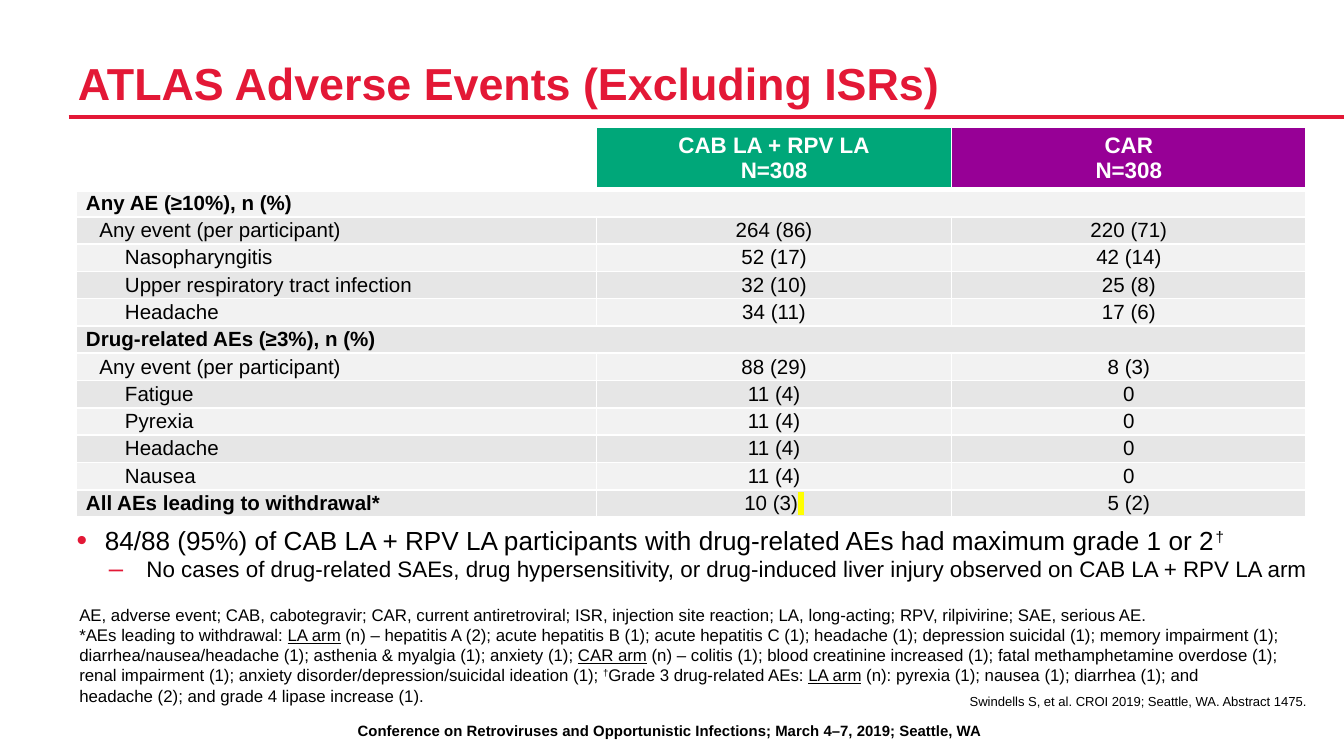
from dataclasses import dataclass
from typing import Optional

from lxml.etree import SubElement
from pptx import Presentation
from pptx.dml.color import RGBColor
from pptx.enum.shapes import MSO_CONNECTOR
from pptx.enum.text import MSO_ANCHOR as Anchor, PP_ALIGN as Align
from pptx.oxml.ns import qn
from pptx.util import Emu, Inches, Pt

RED, GREEN, PURPLE = "E31836", "00A779", "970096"
BLACK, WHITE, YELLOW = "000000", "FFFFFF", "FFFF00"
BANDS = ("F2F2F2", "E6E6E6")
SLIDE_WIDTH = Inches(10)
SLIDE_HEIGHT = SLIDE_WIDTH * 9 // 16


@dataclass(frozen=True)
class Frame:
    """A place on the slide, in percent of its width and height."""
    left: float
    top: float
    width: float
    height: float

    def emu(self) -> tuple:
        return (across(self.left), down(self.top), across(self.width), down(self.height))


@dataclass(frozen=True)
class Span:
    text: str
    underline: bool = False
    raised: bool = False


@dataclass(frozen=True)
class Style:
    size: float
    color: str = BLACK
    bold: bool = False
    align: Align = Align.LEFT


@dataclass(frozen=True)
class Bullet:
    mark: str
    margin: float
    hanging: float


@dataclass(frozen=True)
class Row:
    label: str
    injection: str = ""
    current: str = ""
    indent: float = 0
    bold: bool = False


LABEL_INDENT, EVENT_INDENT = 0.1, 0.29
TREATMENTS = [("CAB LA + RPV LA\nN=308", GREEN), ("CAR\nN=308", PURPLE)]
ROWS = [
    Row("Any AE (≥10%), n (%)", bold=True),
    Row("Any event (per participant)", "264 (86)", "220 (71)", LABEL_INDENT),
    Row("Nasopharyngitis", "52 (17)", "42 (14)", EVENT_INDENT),
    Row("Upper respiratory tract infection", "32 (10)", "25 (8)", EVENT_INDENT),
    Row("Headache", "34 (11)", "17 (6)", EVENT_INDENT),
    Row("Drug-related AEs (≥3%), n (%)", bold=True),
    Row("Any event (per participant)", "88 (29)", "8 (3)", LABEL_INDENT),
    *(Row(event, "11 (4)", "0", EVENT_INDENT)
      for event in ("Fatigue", "Pyrexia", "Headache", "Nausea")),
    Row("All AEs leading to withdrawal*", "10 (3)", "5 (2)", bold=True),
]
DAGGER = Span("†", raised=True)
LA_ARM, CAR_ARM = Span("LA arm", underline=True), Span("CAR arm", underline=True)
ABBREVIATIONS = [Span(
    "AE, adverse event; CAB, cabotegravir; CAR, current antiretroviral; ISR, injection site "
    "reaction; LA, long-acting; RPV, rilpivirine; SAE, serious AE.")]
WITHDRAWALS = [
    Span("*AEs leading to withdrawal: "), LA_ARM,
    Span(" (n) – hepatitis A (2); acute hepatitis B (1); acute hepatitis C (1); headache (1); "
         "depression suicidal (1); memory impairment (1); diarrhea/nausea/headache (1); "
         "asthenia & myalgia (1); anxiety (1); "),
    CAR_ARM,
    Span(" (n) – colitis (1); blood creatinine increased (1); fatal methamphetamine overdose "
         "(1); renal impairment (1); anxiety disorder/depression/suicidal ideation (1); "),
    DAGGER, Span("Grade 3 drug-related AEs: "), LA_ARM,
    Span(" (n): pyrexia (1); nausea (1); diarrhea (1); and \n"
         "headache (2); and grade 4 lipase increase (1)."),
]


def across(percent: float) -> Emu:
    return Emu(round(SLIDE_WIDTH * percent / 100))


def down(percent: float) -> Emu:
    return Emu(round(SLIDE_HEIGHT * percent / 100))


def rgb(color: str) -> RGBColor:
    return RGBColor.from_string(color)


def write(paragraph, spans: list[Span], style: Style) -> None:
    paragraph.alignment = style.align
    for span in spans:
        for number, line in enumerate(span.text.split("\n")):
            if number:
                paragraph.add_line_break()
            run = paragraph.add_run()
            run.text = line
            font = run.font
            font.name, font.size, font.bold = "Arial", Pt(style.size), style.bold
            font.color.rgb = rgb(style.color)
            if span.underline:
                font.underline = True
            if span.raised:
                font._element.set("baseline", "30000")


def add_text(slide, frame: Frame, paragraphs: list[list[Span]], style: Style,
             anchor: Anchor = Anchor.TOP, inset: float = 0):
    text = slide.shapes.add_textbox(*frame.emu()).text_frame
    text.word_wrap = True
    text.vertical_anchor = anchor
    text.margin_left = text.margin_right = Inches(inset)
    text.margin_top = text.margin_bottom = Inches(inset / 2)
    for number, spans in enumerate(paragraphs):
        write(text.add_paragraph() if number else text.paragraphs[0], spans, style)
    return text


def set_bullet(paragraph, bullet: Bullet) -> None:
    props = paragraph._p.get_or_add_pPr()
    props.set("marL", str(Inches(bullet.margin)))
    props.set("indent", str(-Inches(bullet.hanging)))
    SubElement(SubElement(props, qn("a:buClr")), qn("a:srgbClr"), val=RED)
    SubElement(props, qn("a:buSzPct"), val="115000")
    SubElement(props, qn("a:buFont"), typeface="Arial")
    SubElement(props, qn("a:buChar"), char=bullet.mark)


def set_borders(cell, top: float = 1, bottom: float = 1) -> None:
    props = cell._tc.get_or_add_tcPr()
    widths = {"a:lnL": 1, "a:lnR": 1, "a:lnT": top, "a:lnB": bottom}
    for place, (tag, width) in enumerate(widths.items()):
        line = SubElement(props, qn(tag), w=str(Pt(width)))
        SubElement(SubElement(line, qn("a:solidFill")), qn("a:srgbClr"), val=WHITE)
        props.insert(place, line)


def fill_cell(cell, text: str, fill: str, style: Style, indent: float = 0,
              top: float = 1, bottom: float = 1) -> None:
    cell.fill.solid()
    cell.fill.fore_color.rgb = rgb(fill)
    cell.vertical_anchor = Anchor.MIDDLE
    cell.margin_left = cell.margin_right = Inches(0.07)
    cell.margin_top = cell.margin_bottom = 0
    paragraph = cell.text_frame.paragraphs[0]
    if text:
        write(paragraph, [Span(text)], style)
        paragraph._p.get_or_add_pPr().set("marL", str(Inches(indent)))
    else:
        SubElement(paragraph._p, qn("a:endParaRPr"), sz=str(style.size * 100))
    set_borders(cell, top, bottom)


def add_events_table(slide, frame: Frame) -> None:
    table = slide.shapes.add_table(len(ROWS) + 1, 3, *frame.emu()).table
    table.first_row = table.horz_banding = False
    for column, share in zip(table.columns, (38.7, 26.4, 26.4)):
        column.width = across(share)
    header_height = down(8.18)
    for row in table.rows:
        row.height = (down(frame.height) - header_height) // len(ROWS)
    table.rows[0].height = header_height
    heading = Style(12, WHITE, True, Align.CENTER)
    for column, (text, color) in enumerate([("", WHITE), *TREATMENTS]):
        fill_cell(table.cell(0, column), text, color, heading, bottom=3)
    for number, row in enumerate(ROWS, 1):
        texts = (row.label, row.injection, row.current)
        for column, text in enumerate(texts):
            style = Style(11, align=Align.CENTER) if column else Style(11, bold=row.bold)
            fill_cell(table.cell(number, column), text, BANDS[(number - 1) % 2], style,
                      0 if column else row.indent, top=3 if number == 1 else 1)
        if not row.injection:
            table.cell(number, 0).merge(table.cell(number, 2))
    highlight_end(table.cell(len(ROWS), 1).text_frame.paragraphs[0])


def highlight_end(paragraph) -> None:
    """Close the paragraph with one highlighted space."""
    write(paragraph, [Span(" ")], Style(11, align=Align.CENTER))
    props = paragraph.runs[-1].font._element
    highlight = SubElement(props, qn("a:highlight"))
    SubElement(highlight, qn("a:srgbClr"), val=YELLOW)
    props.find(qn("a:solidFill")).addnext(highlight)


def add_title_rule(slide) -> None:
    rule = slide.shapes.add_connector(
        MSO_CONNECTOR.STRAIGHT, across(5.1), down(15.47), across(100), down(15.47))
    rule.line.color.rgb = rgb(RED)
    rule.line.width = Pt(2)
    SubElement(rule._element.spPr, qn("a:effectLst"))


def add_findings(slide, frame: Frame) -> None:
    text = add_text(slide, frame, [[
        Span("84/88 (95%) of CAB LA + RPV LA participants with drug-related AEs "
             "had maximum grade 1 or 2"), DAGGER]], Style(14))
    detail = text.add_paragraph()
    detail.level = 1
    write(detail, [Span("No cases of drug-related SAEs, drug hypersensitivity, or drug-induced "
                        "liver injury observed on CAB LA + RPV LA arm")], Style(12))
    set_bullet(text.paragraphs[0], Bullet("•", 0.21, 0.21))
    set_bullet(detail, Bullet("–", 0.52, 0.28))


def main() -> None:
    deck = Presentation()
    deck.slide_width, deck.slide_height = SLIDE_WIDTH, SLIDE_HEIGHT
    slide = deck.slides.add_slide(deck.slide_layouts[6])
    add_text(slide, Frame(0.6, 94.58, 98.5, 4.09),
             [[Span("Conference on Retroviruses and Opportunistic Infections; "
                    "March 4–7, 2019; Seattle, WA")]],
             Style(8, bold=True, align=Align.CENTER), inset=0.1)
    add_title_rule(slide)
    add_findings(slide, Frame(5.7, 69.33, 92.4, 7.82))
    title = add_text(slide, Frame(5.8, 2.31, 82.5, 12.27),
                     [[Span("ATLAS Adverse Events (Excluding ISRs)")]],
                     Style(24, RED, True), Anchor.BOTTOM)
    title.paragraphs[0].line_spacing = 0.9
    add_text(slide, Frame(5.9, 78.04, 91.4, 15.29), [ABBREVIATIONS, WITHDRAWALS],
             Style(9), Anchor.BOTTOM)
    add_text(slide, Frame(5.8, 91.73, 91.4, 2.67),
             [[Span("Swindells S, et al. CROI 2019; Seattle, WA. Abstract 1475.")]],
             Style(7, align=Align.RIGHT))
    add_events_table(slide, Frame(5.7, 16.89, 91.5, 51.56))
    deck.save("out.pptx")


if __name__ == "__main__":
    main()
